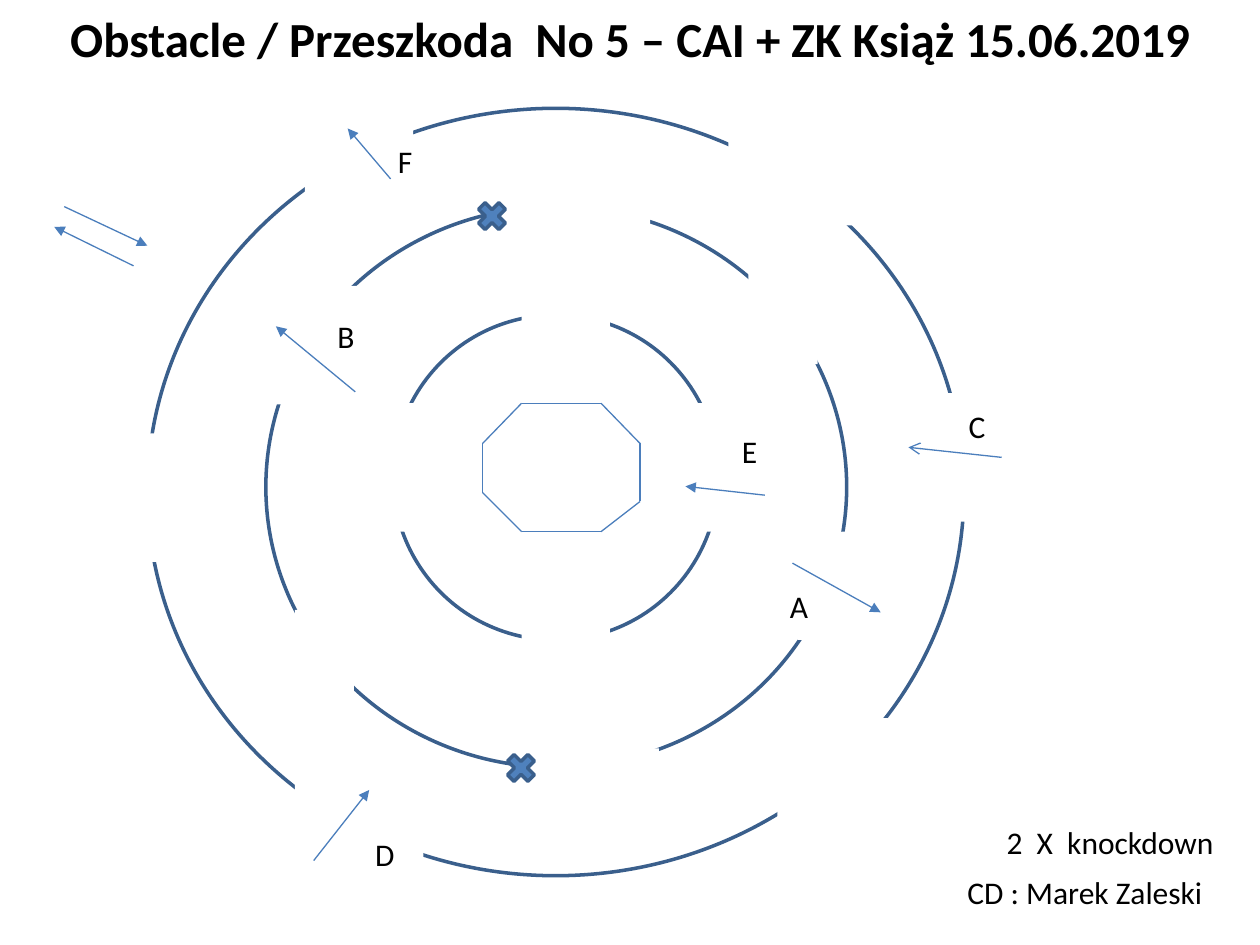
from lxml import etree
from pptx import Presentation
from pptx.dml.color import RGBColor
from pptx.enum.shapes import MSO_CONNECTOR, MSO_SHAPE
from pptx.enum.text import MSO_ANCHOR, MSO_AUTO_SIZE, PP_ALIGN
from pptx.oxml.ns import qn
from pptx.util import Inches, Pt

STRAIGHT = MSO_CONNECTOR.STRAIGHT
OVAL, RECTANGLE, CROSS = MSO_SHAPE.OVAL, MSO_SHAPE.RECTANGLE, MSO_SHAPE.MATH_MULTIPLY
MIDDLE, CENTER, LEFT = MSO_ANCHOR.MIDDLE, PP_ALIGN.CENTER, PP_ALIGN.LEFT
FIT_SHAPE, NO_FIT = MSO_AUTO_SIZE.SHAPE_TO_FIT_TEXT, MSO_AUTO_SIZE.NONE

WHITE, BLACK = "FFFFFF", "000000"
THIN_BLUE, WALL_BLUE, CROSS_BLUE = "4B7EBC", "3A5F8C", "4F81BD"


def color(value):
    return RGBColor.from_string(value)


def add_line(page, start, end, head=None):
    points = [Inches(value) for value in (*start, *end)]
    line = page.shapes.add_connector(STRAIGHT, *points)
    line.line.color.rgb = color(THIN_BLUE)
    line.line.width = Pt(0.75)
    if head:
        outline = line.line._get_or_add_ln()
        etree.SubElement(outline, qn("a:tailEnd"), type=head)
    etree.SubElement(line._element.spPr, qn("a:effectLst"))


deck = Presentation()
deck.slide_width, deck.slide_height = Inches(10), Inches(7.5)
page = deck.slides.add_slide(deck.slide_layouts[6])

# Central octagon
corners = [(4.14, 3.2), (4.77, 3.2), (5.08, 3.52), (5.08, 3.98),
           (4.77, 4.22), (4.14, 4.22), (3.83, 3.91), (3.83, 3.52)]
for start, end in zip(corners, corners[1:] + corners[:1]):
    add_line(page, start, end)

# Ring walls, white gaps cut into them, and crosses at the wall ends
rings = [(3.12, 2.5, 2.58, 2.58), (2.11, 1.64, 4.61, 4.45), (1.17, 0.86, 6.48, 6.09)]
gaps = [
    # inner ring
    (4.14, 2.42, 0.7, 0.31), (5.47, 3.2, 0.47, 1.02),
    (3.05, 3.2, 0.31, 1.02), (4.14, 4.92, 0.7, 0.31),
    # middle ring
    (4.06, 5.94, 1.17, 0.23), (3.91, 1.56, 1.25, 0.39), (6.33, 4.22, 0.63, 0.86),
    (5.94, 2.11, 0.55, 0.78), (2.11, 2.27, 0.94, 0.94), (2.34, 4.84, 0.47, 0.78),
    # outer ring
    (5.78, 1.09, 1.02, 0.7), (2.42, 0.86, 0.86, 0.86), (0.86, 3.44, 0.63, 1.02),
    (2.34, 6.09, 1.02, 1.02), (6.17, 5.7, 1.25, 0.86), (7.27, 3.12, 0.86, 1.02),
]
crosses = [(3.75, 1.56, 0.31, 0.31), (3.98, 5.94, 0.31, 0.31)]
for kind, places, fill, outline in [(OVAL, rings, None, WALL_BLUE),
                                    (RECTANGLE, gaps, WHITE, None),
                                    (CROSS, crosses, CROSS_BLUE, WALL_BLUE)]:
    for place in places:
        shape = page.shapes.add_shape(kind, *[Inches(value) for value in place])
        shape.shadow.inherit = False
        if fill:
            shape.fill.solid()
            shape.fill.fore_color.rgb = color(fill)
        else:
            shape.fill.background()
        if outline:
            shape.line.color.rgb = color(outline)
            shape.line.width = Pt(2)
        else:
            shape.line.fill.background()

# Driving directions
for start, end, head in [
    ((7.95, 3.63), (7.21, 3.55), "arrow"),
    ((0.51, 1.64), (1.17, 1.95), "triangle"),
    ((1.06, 2.11), (0.43, 1.8), "triangle"),
    ((3.1, 1.42), (2.76, 1.02), "triangle"),
    ((6.07, 3.93), (5.44, 3.86), "triangle"),
    ((6.29, 4.47), (6.99, 4.86), "triangle"),
    ((2.82, 3.11), (2.19, 2.59), "triangle"),
    ((2.49, 6.83), (2.93, 6.27), "triangle"),
]:
    add_line(page, start, end, head)

# Title, gate letters and notes
title = "Obstacle / Przeszkoda  No 5 – CAI + ZK Książ 15.06.2019"
for text, left, top, width in [
    (title, 0, 0, 10),
    ("A", 6.17, 4.61, 0.45),
    ("B", 2.58, 2.47, 0.34),
    ("C", 7.59, 3.18, 0.34),
    ("D", 2.88, 6.58, 0.36),
    ("E", 5.79, 3.38, 0.32),
    ("F", 3.06, 1.08, 0.32),
    ("2  X  knockdown", 7.89, 6.48, 1.87),
    ("CD : Marek Zaleski", 7.58, 6.88, 2.09),
]:
    is_title = text == title
    height = 0.6 if is_title else 0.4
    box = page.shapes.add_textbox(Inches(left), Inches(top), Inches(width), Inches(height))
    frame = box.text_frame
    frame.word_wrap = is_title or text == "A"
    frame.auto_size = NO_FIT if is_title else FIT_SHAPE
    if is_title:
        frame.vertical_anchor = MIDDLE
    para = frame.paragraphs[0]
    para.alignment = CENTER if is_title else LEFT
    span = para.add_run()
    span.text = text
    span.font.name = "Calibri"
    span.font.size = Pt(28 if is_title else 18)
    span.font.bold = is_title
    span.font.color.rgb = color(BLACK)

deck.save("out.pptx")
